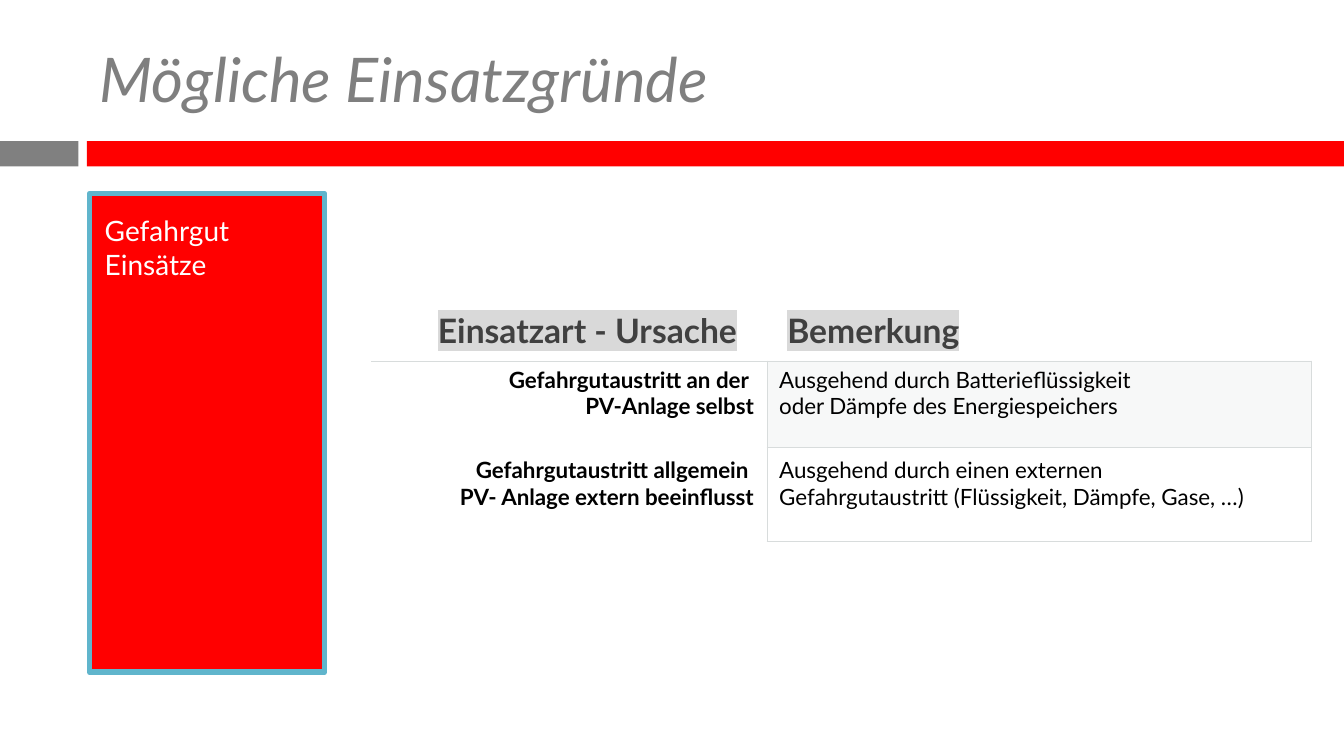
"""Build the slide on possible reasons for hazardous-material call-outs."""
from lxml.etree import SubElement
from pptx import Presentation
from pptx.dml.color import RGBColor
from pptx.enum.shapes import MSO_SHAPE
from pptx.enum.text import MSO_ANCHOR, PP_ALIGN
from pptx.oxml.ns import qn
from pptx.util import Pt

COLORS = {
    "grey": "808080", "red": "FF0000", "title": "7F7F7F", "blue": "60B5CC",
    "white": "FFFFFF", "black": "000000", "header": "404040",
    "highlight": "D9D9D9", "border": "D8DCDC", "tint": "D8DEDC",
}
HEADER = {"size": Pt(24), "bold": True}
CAUSE = {"size": Pt(16), "bold": True}
REMARK = {"size": Pt(16), "bold": False}
HEADER_ROW = ("Einsatzart - Ursache", "Bemerkung")
BODY_ROWS = (
    ("Gefahrgutaustritt an der \vPV-Anlage selbst",
     "Ausgehend durch Batterieflüssigkeit\voder Dämpfe des Energiespeichers"),
    ("Gefahrgutaustritt allgemein \vPV- Anlage extern beeinflusst",
     "Ausgehend durch einen externen\vGefahrgutaustritt (Flüssigkeit, Dämpfe, Gase, …)"),
)
COLUMN_WIDTHS = (283, 388.8)
ROW_HEIGHTS = (42.5, 62, 67.2)
BODY_MARGINS = (8.6, 2.2, 9.4, 18.7)


def rgb(name):
    """Return the named colour."""
    return RGBColor.from_string(COLORS[name])


def set_margins(holder, margins):
    """Set left, top, right and bottom margins of a text frame or cell."""
    for side, margin in zip(("left", "top", "right", "bottom"), margins):
        setattr(holder, f"margin_{side}", Pt(margin))


def write(frame, text, color, formats, align=PP_ALIGN.LEFT, after=0, highlight=None):
    """Fill the first paragraph of a frame with formatted text."""
    frame.word_wrap = True
    paragraph = frame.paragraphs[0]
    paragraph.text = text
    paragraph.alignment = align
    paragraph.space_after = Pt(after)
    for run in paragraph.runs:
        for attribute, setting in {"name": "Lato", **formats}.items():
            setattr(run.font, attribute, setting)
        run.font.color.rgb = rgb(color)
        if highlight:
            properties = run.font._element
            marker = SubElement(properties, qn("a:highlight"))
            SubElement(marker, qn("a:srgbClr"), val=COLORS[highlight])
            properties.find(qn("a:solidFill")).addnext(marker)


def add_block(slide, left, top, width, height, color, outline=None):
    """Add a plain rectangle, optionally outlined."""
    block = slide.shapes.add_shape(
        MSO_SHAPE.RECTANGLE, Pt(left), Pt(top), Pt(width), Pt(height))
    block.shadow.inherit = False
    block.fill.solid()
    block.fill.fore_color.rgb = rgb(color)
    if outline:
        block.line.color.rgb = rgb(outline)
        block.line.width = Pt(4)
    else:
        block.line.fill.background()
    return block


def add_title(slide, text):
    """Add the slide title."""
    title = slide.shapes.add_textbox(Pt(64), Pt(21.6), Pt(848), Pt(68.4)).text_frame
    title.vertical_anchor = MSO_ANCHOR.MIDDLE
    write(title, text, "title", {"size": Pt(44), "italic": True})


def add_sidebar(slide, text):
    """Add the outlined topic panel."""
    panel = add_block(slide, 64, 138.2, 167.8, 342, "red", "blue").text_frame
    panel.vertical_anchor = MSO_ANCHOR.TOP
    set_margins(panel, (10.8, 14.4, 10.8, 7.2))
    write(panel, text, "white", {"size": Pt(20)}, after=10)


def style_cell(cell, borders, tinted=False):
    """Draw the listed borders and the fill of a cell."""
    properties = cell._tc.get_or_add_tcPr()
    for side in "LRTB":
        line = SubElement(properties, qn(f"a:ln{side}"), w=str(Pt(0.75)))
        if side in borders:
            solid = SubElement(line, qn("a:solidFill"))
            SubElement(solid, qn("a:srgbClr"), val=COLORS["border"])
        else:
            SubElement(line, qn("a:noFill"))
    if tinted:
        cell.fill.solid()
        cell.fill.fore_color.rgb = rgb("tint")
        tint = properties.find(f"{qn('a:solidFill')}/{qn('a:srgbClr')}")
        SubElement(tint, qn("a:alpha"), val="20000")
    else:
        cell.fill.background()


def add_causes_table(slide):
    """Add the table of causes and remarks."""
    table = slide.shapes.add_table(
        len(ROW_HEIGHTS), len(COLUMN_WIDTHS), Pt(265), Pt(214.6),
        Pt(sum(COLUMN_WIDTHS)), Pt(sum(ROW_HEIGHTS))).table
    table.first_row = table.horz_banding = False
    for column, width in zip(table.columns, COLUMN_WIDTHS):
        column.width = Pt(width)
    for row, height in zip(table.rows, ROW_HEIGHTS):
        row.height = Pt(height)

    header_layout = ((PP_ALIGN.RIGHT, 21.6), (PP_ALIGN.JUSTIFY, 8))
    for column, (text, (align, right)) in enumerate(zip(HEADER_ROW, header_layout)):
        cell = table.cell(0, column)
        set_margins(cell, (14.4, 7.2, right, 7.2))
        write(cell.text_frame, text, "header", HEADER, align, 6, "highlight")
        style_cell(cell, "B")

    body_layout = ((CAUSE, PP_ALIGN.RIGHT), (REMARK, PP_ALIGN.LEFT))
    for row, texts in enumerate(BODY_ROWS, start=1):
        for column, (text, (formats, align)) in enumerate(zip(texts, body_layout)):
            cell = table.cell(row, column)
            cell.vertical_anchor = MSO_ANCHOR.MIDDLE
            set_margins(cell, BODY_MARGINS)
            write(cell.text_frame, text, "black", formats, align, 6)
            cause_borders = "TR" if row == 1 else "R"
            style_cell(cell, "LRTB" if column else cause_borders,
                       tinted=(row, column) == (1, 1))


def main():
    """Build and save the slide."""
    presentation = Presentation()
    presentation.slide_width, presentation.slide_height = Pt(960), Pt(540)
    slide = presentation.slides.add_slide(presentation.slide_layouts[6])
    add_block(slide, 0, 100.8, 56, 18, "grey")
    add_block(slide, 62, 100.8, 898, 18, "red")
    add_title(slide, "Mögliche Einsatzgründe")
    add_sidebar(slide, "Gefahrgut Einsätze")
    add_causes_table(slide)
    presentation.save("out.pptx")


if __name__ == "__main__":
    main()
